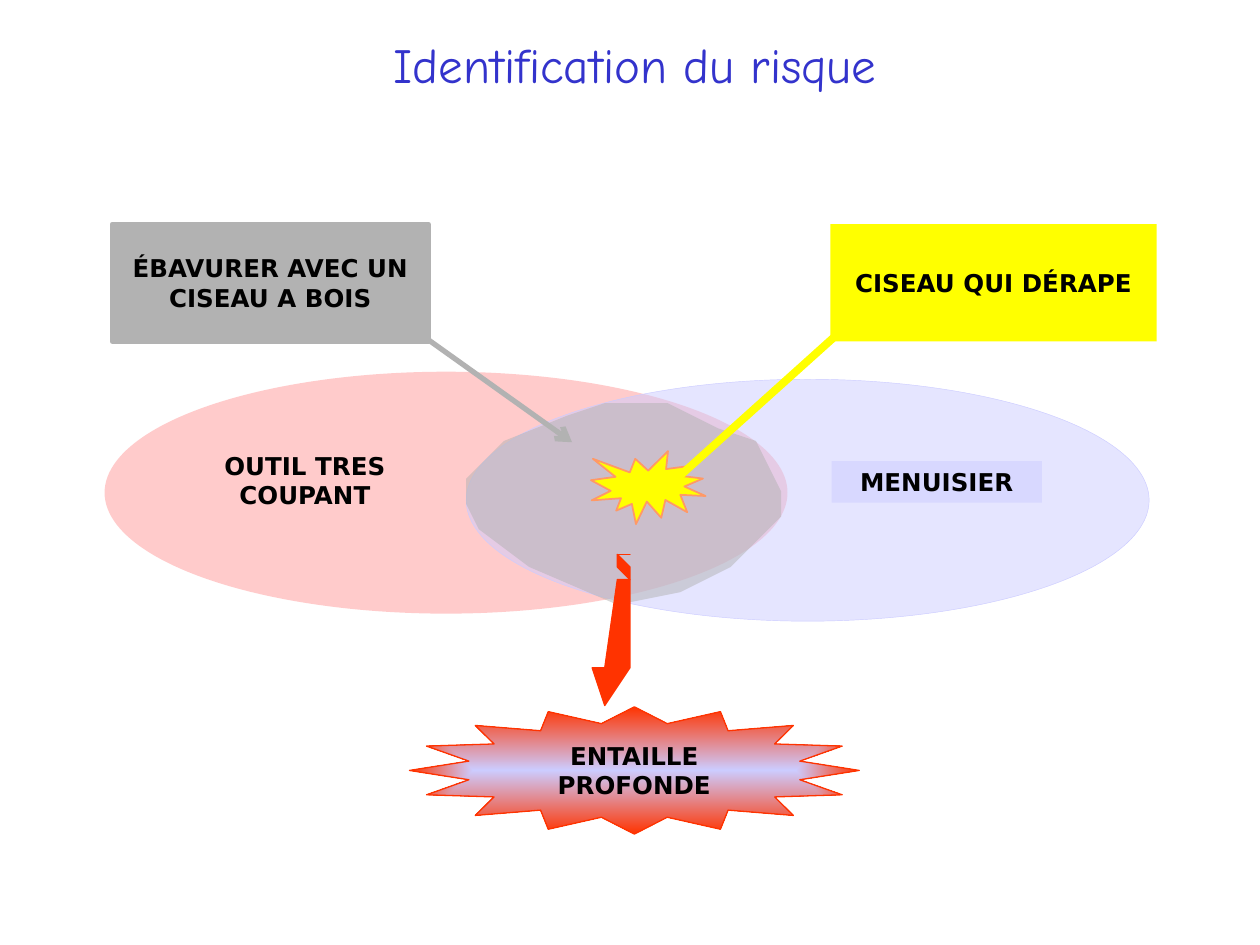
from dataclasses import dataclass
from typing import NamedTuple, Optional

from lxml.etree import SubElement
from pptx import Presentation
from pptx.dml.color import RGBColor
from pptx.enum.shapes import MSO_CONNECTOR, MSO_SHAPE as Preset
from pptx.enum.text import MSO_ANCHOR as Anchor, MSO_AUTO_SIZE as AutoSize, PP_ALIGN as Align
from pptx.oxml import parse_xml
from pptx.oxml.ns import nsdecls, qn
from pptx.util import Inches, Pt

COLUMNS, ROWS = 100, 75
CELL = Inches(0.1)


@dataclass(frozen=True)
class Theme:
    title_font: str = "Comic Neue"
    label_font: str = "DejaVu Sans"
    title_size: int = 28
    label_size: int = 14
    title: str = "3333CC"
    ink: str = "000000"
    tool: str = "FF9999"
    worker: str = "CCCCFF"
    task: str = "B2B2B2"
    event: str = "FFFF00"
    event_edge: str = "FF9966"
    harm: str = "FF3300"
    veil: int = 50


class Area(NamedTuple):
    column: float
    row: float
    columns: float
    rows: float


class Point(NamedTuple):
    column: float
    row: float


class Edge(NamedTuple):
    color: str
    width: float


@dataclass(frozen=True)
class Figure:
    preset: Preset
    area: Area
    fill: str
    opacity: int = 100
    edge: Optional[Edge] = None
    text: str = ""
    anchor: Anchor = Anchor.MIDDLE
    margin: float = 1


THEME = Theme()

TOOL_ZONE = Figure(Preset.OVAL, Area(8.3, 29.5, 54.2, 19.2), THEME.tool, THEME.veil)
WORKER_ZONE = Figure(Preset.OVAL, Area(37, 30.1, 54.2, 19.2), THEME.worker, THEME.veil,
                     Edge(THEME.worker, 0.25))
WORKER_LABEL = Figure(Preset.RECTANGLE, Area(66, 36.6, 16.7, 3.3), THEME.worker, THEME.veil,
                      text="MENUISIER", anchor=Anchor.TOP)
HARM_STAR = Figure(Preset.STAR_16_POINT, Area(32.5, 56.1, 35.7, 10.1), THEME.harm,
                   edge=Edge(THEME.harm, 0.75), text="ENTAILLE PROFONDE", margin=0)
EVENT_BURST = Figure(Preset.EXPLOSION1, Area(46.9, 35.8, 9.1, 5.8), THEME.event,
                     edge=Edge(THEME.event_edge, 1))
EVENT_BOX = Figure(Preset.RECTANGLE, Area(65.9, 17.8, 25.9, 9.3), THEME.event,
                   text="CISEAU QUI DÉRAPE")
TASK_BOX = Figure(Preset.RECTANGLE, Area(8.9, 17.8, 25.1, 9.3), THEME.task,
                  edge=Edge(THEME.task, 3), text="ÉBAVURER AVEC UN CISEAU A BOIS")

OVERLAP = [[
    Point(50.7, 31.5), Point(53.3, 32.4), Point(56.8, 33.7), Point(59.6, 35.3),
    Point(61.3, 37), Point(62.4, 38.7), Point(62.3, 40), Point(61.9, 41.3),
    Point(60.5, 43.4), Point(57.9, 45.1), Point(54.5, 46.7), Point(49.2, 48.1),
    Point(41.6, 45.3), Point(37.8, 42.3), Point(36.8, 40), Point(37.3, 37.5),
    Point(39.6, 35.2), Point(44.6, 32.9), Point(48.4, 31.5),
]]
STRIPED_ARROW = [
    [Point(50.2, 53.4), Point(49.5, 53.3), Point(50.3, 45.9), Point(48.9, 45.7),
     Point(48, 53.1), Point(47.3, 53.1), Point(48.4, 56.3)],
    [Point(50.5, 44.7), Point(49, 44.5), Point(48.9, 45.3), Point(50.4, 45.5)],
    [Point(50.5, 43.9), Point(49.1, 43.7), Point(49, 44.1), Point(50.5, 44.3)],
]


def cells(count: float) -> int:
    return round(count * CELL)


def paint(shape, fill: str, opacity: int = 100, edge: Optional[Edge] = None) -> None:
    shape.shadow.inherit = False
    shape.fill.solid()
    shape.fill.fore_color.rgb = RGBColor.from_string(fill)
    if opacity < 100:
        color = shape.fill._xPr.find(".//" + qn("a:srgbClr"))
        SubElement(color, qn("a:alpha"), val=str(opacity * 1000))
    if edge:
        shape.line.color.rgb = RGBColor.from_string(edge.color)
        shape.line.width = Pt(edge.width)
    else:
        shape.line.fill.background()


def write(shape, text: str, font: str, size: int, color: str, bold: bool,
          anchor: Anchor, margin: float = 1) -> None:
    frame = shape.text_frame
    frame.word_wrap = True
    frame.vertical_anchor = anchor
    frame.margin_left = frame.margin_right = cells(margin)
    frame.margin_top = frame.margin_bottom = cells(margin / 2)
    if anchor == Anchor.TOP:
        frame.auto_size = AutoSize.SHAPE_TO_FIT_TEXT
    para = frame.paragraphs[0]
    para.alignment = Align.CENTER
    span = para.add_run()
    span.text = text
    span.font.name = font
    span.font.size = Pt(size)
    span.font.bold = bold
    span.font.color.rgb = RGBColor.from_string(color)


def write_label(shape, text: str, anchor: Anchor, margin: float = 1) -> None:
    write(shape, text, THEME.label_font, THEME.label_size, THEME.ink, True, anchor, margin)


def add_box(page, area: Area):
    return page.shapes.add_textbox(*map(cells, area))


def add_figure(page, figure: Figure):
    shape = page.shapes.add_shape(figure.preset, *map(cells, figure.area))
    paint(shape, figure.fill, figure.opacity, figure.edge)
    if figure.text:
        write_label(shape, figure.text, figure.anchor, figure.margin)
    return shape


def add_outline(page, contours: list[list[Point]], fill: str, opacity: int = 100,
                edge: Optional[Edge] = None) -> None:
    first = contours[0]
    builder = page.shapes.build_freeform(*first[0], scale=CELL)
    builder.add_line_segments(first[1:], close=True)
    for contour in contours[1:]:
        builder.move_to(*contour[0])
        builder.add_line_segments(contour[1:], close=True)
    paint(builder.convert_to_shape(), fill, opacity, edge)


def add_link(page, start: Point, end: Point, edge: Edge, arrow: bool = False) -> None:
    link = page.shapes.add_connector(MSO_CONNECTOR.STRAIGHT, *map(cells, start + end))
    link.line.color.rgb = RGBColor.from_string(edge.color)
    link.line.width = Pt(edge.width)
    if arrow:
        SubElement(link.line._get_or_add_ln(), qn("a:headEnd"), type="arrow")
    SubElement(link._element.spPr, qn("a:effectLst"))


def glow_from_center(shape, center: str, rim: str) -> None:
    gradient = parse_xml(
        f'<a:gradFill {nsdecls("a")} rotWithShape="1"><a:gsLst>'
        f'<a:gs pos="0"><a:srgbClr val="{center}"/></a:gs>'
        f'<a:gs pos="100000"><a:srgbClr val="{rim}"/></a:gs></a:gsLst>'
        '<a:path path="shape"><a:fillToRect l="50000" t="50000" r="50000" b="50000"/></a:path>'
        '</a:gradFill>')
    properties = shape._element.spPr
    properties.replace(properties.find(qn("a:solidFill")), gradient)


def main() -> None:
    deck = Presentation()
    deck.slide_width, deck.slide_height = cells(COLUMNS), cells(ROWS)
    page = deck.slides.add_slide(deck.slide_layouts[6])

    write(add_box(page, Area(5.8, 1.7, 89.2, 6.7)), "Identification du risque",
          THEME.title_font, THEME.title_size, THEME.title, False, Anchor.MIDDLE)
    add_figure(page, TOOL_ZONE)
    write_label(add_box(page, Area(13.6, 35.3, 21.2, 5.7)), "OUTIL TRES COUPANT", Anchor.TOP)
    add_figure(page, WORKER_ZONE)
    add_figure(page, WORKER_LABEL)
    add_outline(page, OVERLAP, THEME.task, THEME.veil)
    add_link(page, Point(45.4, 35.1), Point(33.2, 26.4), Edge(THEME.task, 3), arrow=True)
    add_outline(page, STRIPED_ARROW, THEME.harm, edge=Edge(THEME.harm, 0.75))
    glow_from_center(add_figure(page, HARM_STAR), THEME.worker, THEME.harm)
    add_figure(page, EVENT_BURST)
    add_figure(page, EVENT_BOX)
    add_link(page, Point(53.7, 38), Point(66.6, 26.4), Edge(THEME.event, 4.5))
    add_figure(page, TASK_BOX)

    deck.save("out.pptx")


if __name__ == "__main__":
    main()
